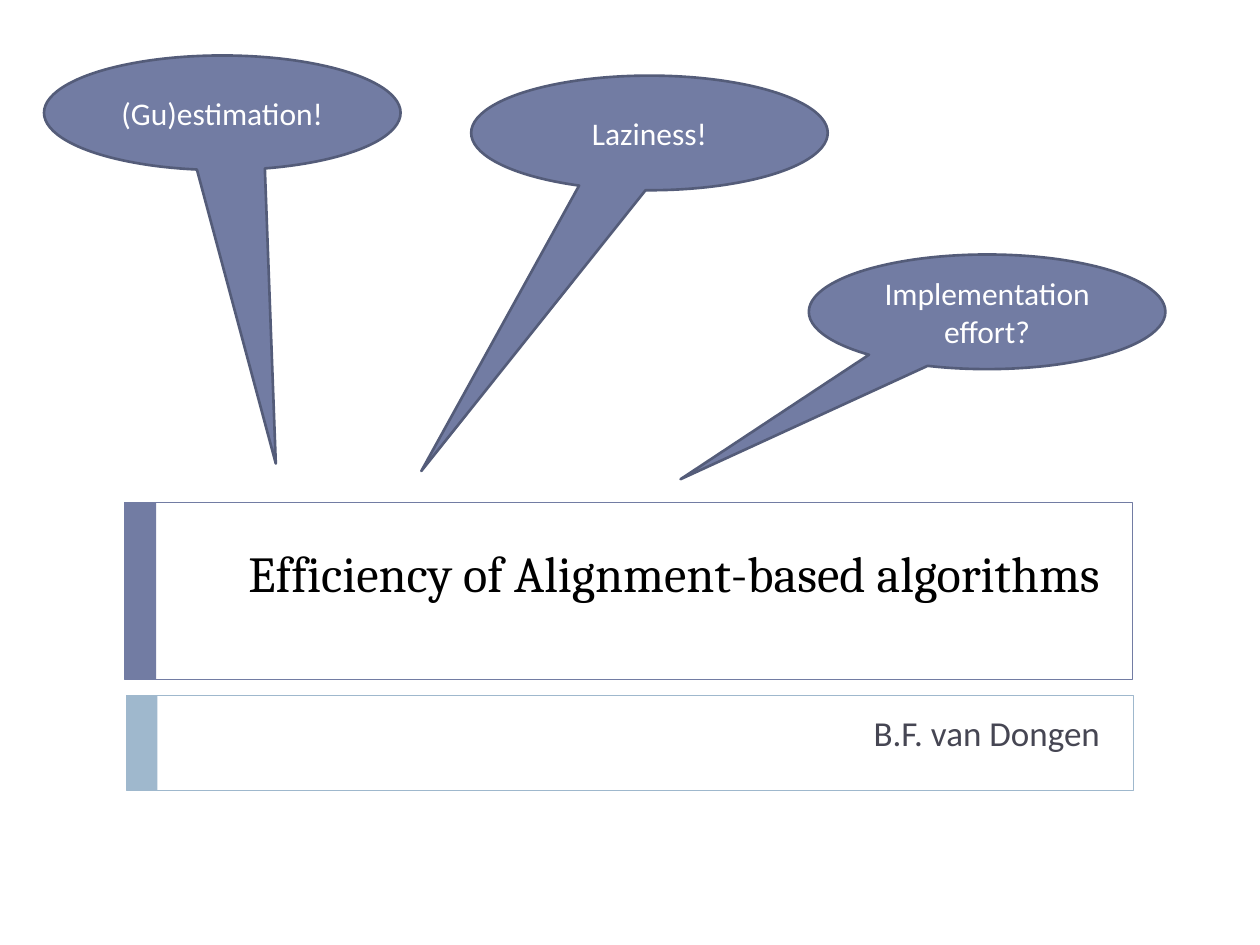
from dataclasses import dataclass

from pptx import Presentation
from pptx.dml.color import RGBColor
from pptx.enum import shapes, text
from pptx.util import Pt


@dataclass(frozen=True)
class Theme:
    indigo: str = "727CA3"
    indigo_dark: str = "545C79"
    sky: str = "9FB8CD"
    title_ink: str = "000000"
    author_ink: str = "464653"
    callout_ink: str = "FFFFFF"
    heading_font: str = "Cambria"
    body_font: str = "Calibri"
    title_size: float = 28.8
    author_size: float = 20
    callout_size: float = 18
    frame_line: float = 0.5
    callout_line: float = 1.5


THEME = Theme()
FRAME_WIDTH, BAR_WIDTH = 576, 18
CALLOUT_WIDTH, CALLOUT_HEIGHT = 203.76, 65.52


def color(value):
    return RGBColor.from_string(value)


def add_preset(slide, preset, left, top, width, height, fill=None, line=None, weight=0):
    shape = slide.shapes.add_shape(preset, Pt(left), Pt(top), Pt(width), Pt(height))
    shape.shadow.inherit = False
    if fill:
        shape.fill.solid()
        shape.fill.fore_color.rgb = color(fill)
    else:
        shape.fill.background()
    if line:
        shape.line.color.rgb = color(line)
        shape.line.width = Pt(weight)
    else:
        shape.line.fill.background()
    return shape


def write(shape, wording, font, size, ink, align, anchor):
    frame = shape.text_frame
    frame.word_wrap = True
    frame.auto_size = text.MSO_AUTO_SIZE.NONE
    frame.vertical_anchor = anchor
    paragraph = frame.paragraphs[0]
    paragraph.alignment = align
    run = paragraph.add_run()
    run.text = wording
    run.font.name = font
    run.font.size = Pt(size)
    run.font.color.rgb = color(ink)
    return paragraph


def add_frame(slide, left, top, height, accent):
    """Outlined box with a solid bar along its left edge."""
    rectangle = shapes.MSO_SHAPE.RECTANGLE
    add_preset(slide, rectangle, left, top, FRAME_WIDTH, height,
               line=accent, weight=THEME.frame_line)
    add_preset(slide, rectangle, left, top, BAR_WIDTH, height, fill=accent)


def set_title(slide, wording):
    title = slide.shapes.title
    title.left, title.top, title.width, title.height = Pt(95.76), Pt(306), Pt(540), Pt(77.76)
    write(title, wording, THEME.heading_font, THEME.title_size, THEME.title_ink,
          text.PP_ALIGN.RIGHT, text.MSO_ANCHOR.TOP)


def add_author(slide, name):
    author = slide.shapes.add_textbox(Pt(95.76), Pt(403.2), Pt(540), Pt(41.76))
    paragraph = write(author, name, THEME.body_font, THEME.author_size, THEME.author_ink,
                      text.PP_ALIGN.RIGHT, text.MSO_ANCHOR.TOP)
    paragraph.space_before = Pt(6)


def add_callout(slide, wording, left, top, tip_x, tip_y):
    """Speech bubble; the tip is offset from its centre in widths and heights."""
    callout = add_preset(slide, shapes.MSO_SHAPE.OVAL_CALLOUT, left, top,
                         CALLOUT_WIDTH, CALLOUT_HEIGHT, THEME.indigo,
                         THEME.indigo_dark, THEME.callout_line)
    callout.adjustments[0] = tip_x
    callout.adjustments[1] = tip_y
    write(callout, wording, THEME.body_font, THEME.callout_size, THEME.callout_ink,
          text.PP_ALIGN.CENTER, text.MSO_ANCHOR.MIDDLE)


def main():
    deck = Presentation()
    deck.slide_width, deck.slide_height = Pt(720), Pt(540)
    slide = deck.slides.add_slide(deck.slide_layouts[5])

    # Title and author, each in its frame
    add_frame(slide, 71.28, 287.28, 100.8, THEME.indigo)
    add_frame(slide, 72, 397.44, 54, THEME.sky)
    set_title(slide, "Efficiency of Alignment-based algorithms")
    add_author(slide, "B.F. van Dongen")

    # Remarks pointing at the title
    remarks = [
        ("Laziness!", 269.28, 43.2, -0.64, 2.95),
        ("(Gu)estimation!", 25.2, 31.68, 0.15, 3.06),
        ("Implementation effort?", 462.24, 145.44, -0.86, 1.46),
    ]
    for remark in remarks:
        add_callout(slide, *remark)

    deck.save("out.pptx")


if __name__ == "__main__":
    main()
